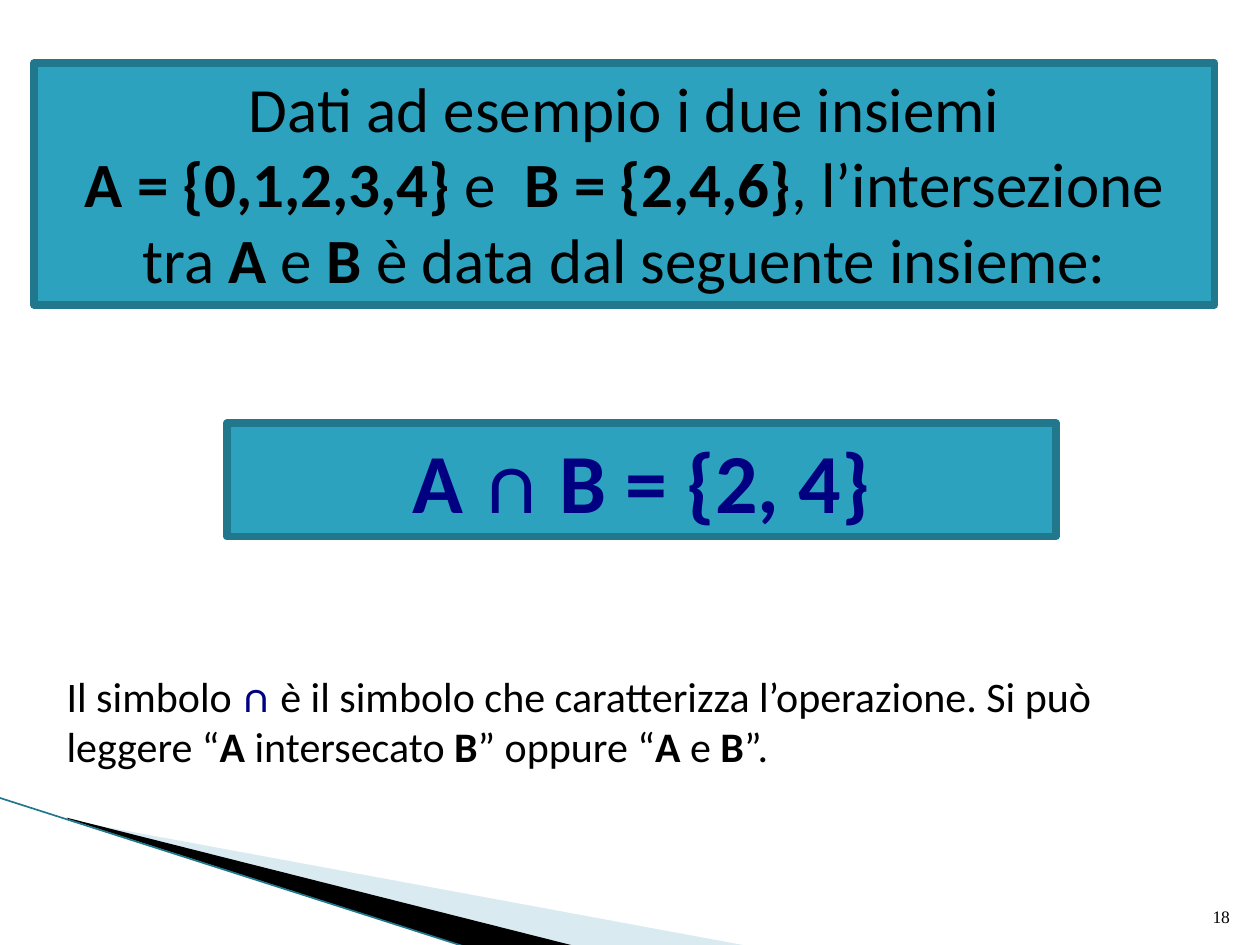
from lxml import etree
from pptx import Presentation
from pptx import util as u
from pptx.dml.color import RGBColor
from pptx.enum import shapes, text
from pptx.oxml.ns import qn

COLORS = {"teal": "2DA2BF", "border": "21788D", "pale": "A0CBDC",
          "black": "000000", "navy": "000080"}


def rgb(name):
    """Return the palette colour of that name."""
    return RGBColor.from_string(COLORS[name])


def add_wedge(s, points, color, alpha=None):
    """Draw a filled polygon through points in inches."""
    pts = [(u.Inches(x), u.Inches(y)) for x, y in points]
    builder = s.shapes.build_freeform(*pts[0])
    builder.add_line_segments(pts[1:], close=True)
    sp = builder.convert_to_shape()
    sp.shadow.inherit = False
    sp.line.fill.background()
    sp.fill.solid()
    sp.fill.fore_color.rgb = rgb(color)
    if alpha is not None:
        clr = sp.fill._xPr.find(".//" + qn("a:srgbClr"))
        etree.SubElement(clr, qn("a:alpha")).set("val", str(alpha * 1000))


def add_corner(s):
    """Draw the swoosh in the lower left corner."""
    add_wedge(s, [(0.55, 6.51), (5.95, 7.51), (4.56, 7.51), (0.55, 6.5)], "pale", 40)
    add_wedge(s, [(0.53, 6.49), (4.57, 7.51), (3.72, 7.52), (0.54, 6.5)], "black")
    line = s.shapes.add_connector(shapes.MSO_CONNECTOR.STRAIGHT, u.Inches(-0.01),
                                  u.Inches(6.33), u.Inches(3.71), u.Inches(7.52))
    line.line.color.rgb = rgb("border")
    line.line.width = u.Pt(0.95)
    etree.SubElement(line._element.spPr, qn("a:effectLst"))


def write(sp, runs, size, align, font="Calibri", anchor=text.MSO_ANCHOR.TOP):
    """Fill a shape with one paragraph of (text, bold, colour) runs."""
    tf = sp.text_frame
    tf.word_wrap = True
    tf.vertical_anchor = anchor
    p = tf.paragraphs[0]
    p.alignment = align
    for i, line in enumerate(runs):
        if i:
            p.add_line_break()
        for words, bold, color in line:
            r = p.add_run()
            r.text = words
            r.font.name = font
            r.font.size = u.Pt(size)
            r.font.bold = bold
            r.font.color.rgb = rgb(color)


def mixed(*words):
    """Make black runs that alternate between regular and bold."""
    return [(word, i % 2 == 1, "black") for i, word in enumerate(words)]


def add_panel(s, box, runs, size):
    """Add a bordered teal panel with centred text."""
    sp = s.shapes.add_shape(shapes.MSO_SHAPE.RECTANGLE, *map(u.Inches, box))
    sp.shadow.inherit = False
    sp.fill.solid()
    sp.fill.fore_color.rgb = rgb("teal")
    sp.line.color.rgb = rgb("border")
    sp.line.width = u.Pt(4.33)
    etree.SubElement(sp.line._get_or_add_ln(), qn("a:round"))
    write(sp, runs, size, text.PP_ALIGN.CENTER)


def add_text(s, box, runs, size, align, **style):
    """Add a plain text box."""
    write(s.shapes.add_textbox(*map(u.Inches, box)), runs, size, align, **style)


def main():
    """Build the slide on the intersection of two sets."""
    prs = Presentation()
    prs.slide_width, prs.slide_height = u.Inches(10), u.Inches(7.5)
    s = prs.slides.add_slide(prs.slide_layouts[6])
    add_corner(s)
    add_text(s, (9.46, 7.01, 0.4, 0.4), [mixed("18")], 10, text.PP_ALIGN.RIGHT,
             font="Times New Roman", anchor=text.MSO_ANCHOR.BOTTOM)
    add_panel(s, (0.27, 0.5, 9.37, 1.92), [
        mixed("Dati ad esempio i due insiemi"),
        mixed("", "A = {0,1,2,3,4}", " e  ", "B = {2,4,6}", ", l’intersezione tra ",
              "A", " e ", "B", " è data dal seguente insieme:")[1:]], 36)
    add_panel(s, (1.8, 3.36, 6.58, 0.9), [[("A ∩ B = {2, 4}", True, "navy")]], 48)
    note = [("Il simbolo ", False, "black"), ("∩ ", True, "navy")] + mixed(
        "è il simbolo che caratterizza l’operazione. Si può leggere “", "A",
        " intersecato ", "B", "” oppure “", "A", " e ", "B", "”.")
    add_text(s, (0.43, 5.27, 8.98, 0.91), [note], 24, text.PP_ALIGN.LEFT)
    prs.save("out.pptx")


if __name__ == "__main__":
    main()
